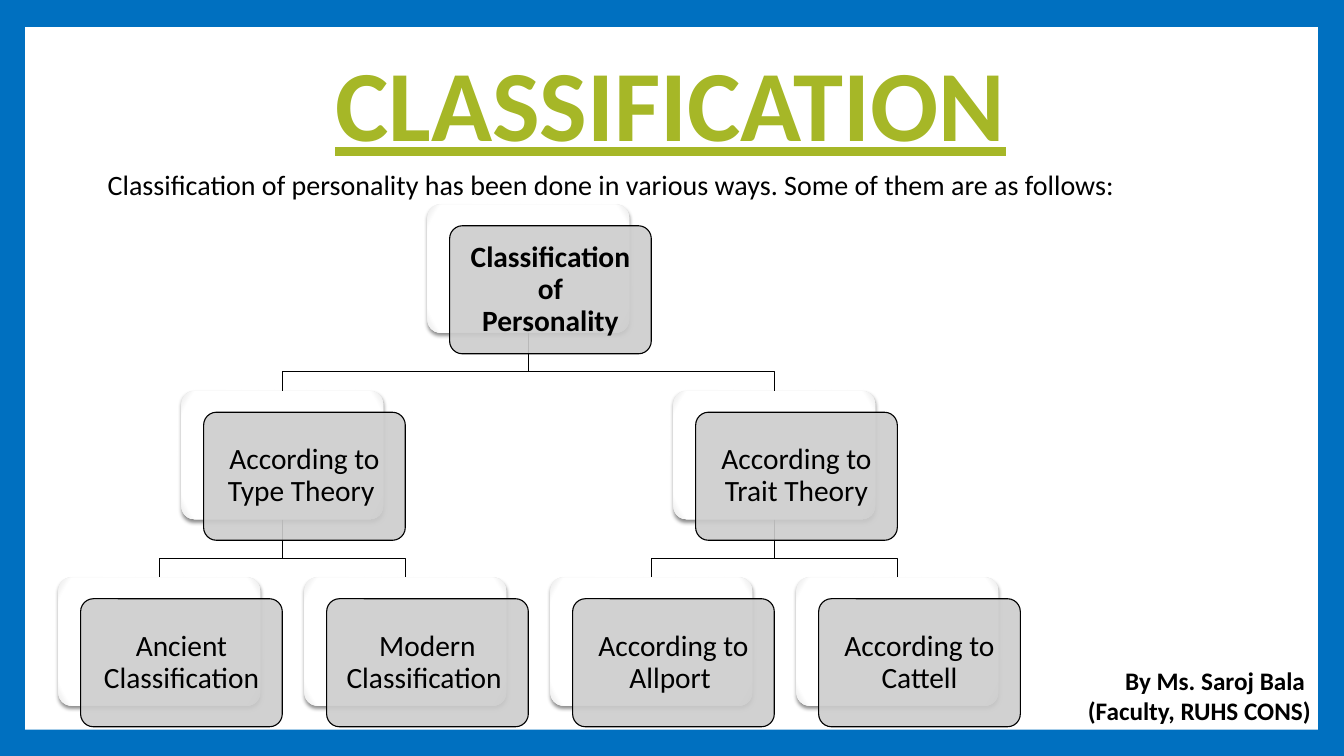
"""Build the slide that classifies theories of personality as a tree."""
from dataclasses import dataclass

from lxml.etree import SubElement
from pptx import Presentation
from pptx.dml.color import RGBColor as Rgb
from pptx.enum.shapes import MSO_SHAPE as Kind
from pptx.enum.text import MSO_ANCHOR as Anchor, MSO_AUTO_SIZE as Fit, PP_ALIGN as Align
from pptx.oxml import parse_xml
from pptx.oxml.ns import nsdecls, qn
from pptx.util import Inches, Pt

HUES = {"frame": "0070C0", "panel": "FFFFFF", "title": "A6B727", "ink": "000000",
        "card": "CCCCCC", "edge": "E7E7E7"}
FONT = "Calibri"
WIDE, HIGH = 2.0, 1.27
LEFT, TOP = 1.58, 2.03
COL, ROW = 2.44, 1.85
SHIFT_X, SHIFT_Y = 0.22, 0.21
DROP = 0.39
ROUND = 0.1

GLOW = f"""<a:gradFill {nsdecls('a')} rotWithShape="1"><a:gsLst>
<a:gs pos="0"><a:srgbClr val="{HUES['panel']}"/></a:gs>
<a:gs pos="90000"><a:srgbClr val="{HUES['panel']}"/></a:gs>
<a:gs pos="100000"><a:srgbClr val="{HUES['edge']}"/></a:gs></a:gsLst>
<a:path path="circle"><a:fillToRect l="100000" t="100000" r="100000" b="100000"/></a:path>
</a:gradFill>"""
SHADE = f"""<a:effectLst {nsdecls('a')}>
<a:outerShdw blurRad="{Pt(3)}" dist="{Pt(2)}" dir="5400000" rotWithShape="0">
<a:srgbClr val="{HUES['ink']}"><a:alpha val="45000"/></a:srgbClr>
</a:outerShdw></a:effectLst>"""


@dataclass(frozen=True)
class Node:
    """A card of the tree, with the cards below it."""
    text: str
    col: float
    row: int
    kids: tuple["Node", ...] = ()
    bold: bool = False

    @property
    def mid(self) -> float:
        """Return the centre of the back card."""
        return LEFT + COL * self.col

    @property
    def top(self) -> float:
        """Return the top of the back card."""
        return TOP + ROW * self.row


@dataclass(frozen=True)
class Note:
    """A free line or two of text."""
    text: str
    box: tuple[float, float, float, float]
    size: int
    align: Align
    bold: bool = False


TREE = Node("Classification of Personality", 1.5, 0, (
    Node("According to Type Theory ", 0.5, 1, (
        Node("Ancient Classification", 0, 2),
        Node("Modern Classification ", 1, 2))),
    Node("According to Trait Theory", 2.5, 1, (
        Node("According to Allport ", 2, 2),
        Node("According to Cattell", 3, 2)))), True)

NOTES = (
    Note("Classification of personality has been done in various ways. "
         "Some of them are as follows:", (0.92, 1.61, 10.28, 0.44), 20, Align.CENTER),
    Note("By Ms. Saroj Bala \n(Faculty, RUHS CONS)", (10.66, 6.55, 2.44, 0.71),
         18, Align.RIGHT, True))


def paint(fill, hue: str) -> None:
    """Fill with one plain colour."""
    fill.solid()
    fill.fore_color.rgb = Rgb.from_string(HUES[hue])


def style(frame, size: int, align: Align, bold: bool, hue: str = "ink") -> None:
    """Format all the text of a frame."""
    for para in frame.paragraphs:
        para.alignment = align
        for run in para.runs:
            run.font.name, run.font.size, run.font.bold = FONT, Pt(size), bold
            run.font.color.rgb = Rgb.from_string(HUES[hue])


def ink(line) -> None:
    """Give a shape its thin black line."""
    paint(line.fill, "ink")
    line.width = Pt(0.79)


def draw_lines(shapes, node: Node) -> None:
    """Draw the elbow lines from a node to the cards below it."""
    foot = node.top + HIGH
    for kid in node.kids:
        pen = shapes.build_freeform(Inches(node.mid), Inches(foot))
        pen.add_line_segments([(Inches(x), Inches(y)) for x, y in (
            (node.mid, foot + DROP), (kid.mid, foot + DROP), (kid.mid, kid.top))], close=False)
        elbow = pen.convert_to_shape()
        elbow.fill.background()
        elbow.shadow.inherit = False
        ink(elbow.line)
        draw_lines(shapes, kid)


def add_card(shapes, left: float, top: float):
    """Add a rounded card without a shadow."""
    card = shapes.add_shape(Kind.ROUNDED_RECTANGLE, Inches(left), Inches(top),
                            Inches(WIDE), Inches(HIGH))
    card.adjustments[0] = ROUND
    return card


def draw_cards(shapes, node: Node) -> None:
    """Draw a node as a white back card and a grey front card, then its kids."""
    left = node.mid - WIDE / 2
    back = add_card(shapes, left, node.top)
    back.line.fill.background()
    props = back.element.spPr
    props.find(qn("a:prstGeom")).addnext(parse_xml(GLOW))
    props.append(parse_xml(SHADE))

    front = add_card(shapes, left + SHIFT_X, node.top + SHIFT_Y)
    front.shadow.inherit = False
    paint(front.fill, "card")
    tint = front.element.spPr.find(qn("a:solidFill"))[0]
    SubElement(tint, qn("a:alpha")).set("val", "90000")
    ink(front.line)
    frame = front.text_frame
    frame.text = node.text
    frame.word_wrap = True
    frame.vertical_anchor = Anchor.MIDDLE
    frame.margin_left = frame.margin_right = Inches(0.13)
    frame.margin_top = frame.margin_bottom = Inches(0.13)
    frame.paragraphs[0].line_spacing = 0.9
    style(frame, 21, Align.CENTER, node.bold)
    for kid in node.kids:
        draw_cards(shapes, kid)


def draw_note(shapes, note: Note) -> None:
    """Draw a text box that fits its text."""
    frame = shapes.add_textbox(*map(Inches, note.box)).text_frame
    frame.text = note.text
    frame.word_wrap = False
    frame.auto_size = Fit.SHAPE_TO_FIT_TEXT
    style(frame, note.size, note.align, note.bold)


def draw_title(slide) -> None:
    """Place the title over the white panel."""
    title = slide.shapes.title
    panel = slide.shapes.add_shape(Kind.RECTANGLE, *map(Inches, (0.25, 0.27, 12.82, 6.97)))
    panel.shadow.inherit = False
    paint(panel.fill, "panel")
    panel.line.fill.background()
    title.element.addprevious(panel.element)
    title.left, title.top, title.width, title.height = map(Inches, (1.25, 0.34, 10.8, 1.48))
    frame = title.text_frame
    frame.text = "CLASSIFICATION"
    frame.vertical_anchor = Anchor.MIDDLE
    frame.paragraphs[0].line_spacing = 0.9
    style(frame, 72, Align.CENTER, True, "title")
    frame.paragraphs[0].runs[0].font.underline = True


def main() -> None:
    """Build and save the deck."""
    deck = Presentation()
    deck.slide_width, deck.slide_height = Inches(13.33), Inches(7.5)
    slide = deck.slides.add_slide(deck.slide_layouts[5])
    paint(slide.background.fill, "frame")
    draw_title(slide)
    group = slide.shapes.add_group_shape()
    draw_lines(group.shapes, TREE)
    draw_cards(group.shapes, TREE)
    for note in NOTES:
        draw_note(slide.shapes, note)
    deck.save("out.pptx")


if __name__ == "__main__":
    main()
